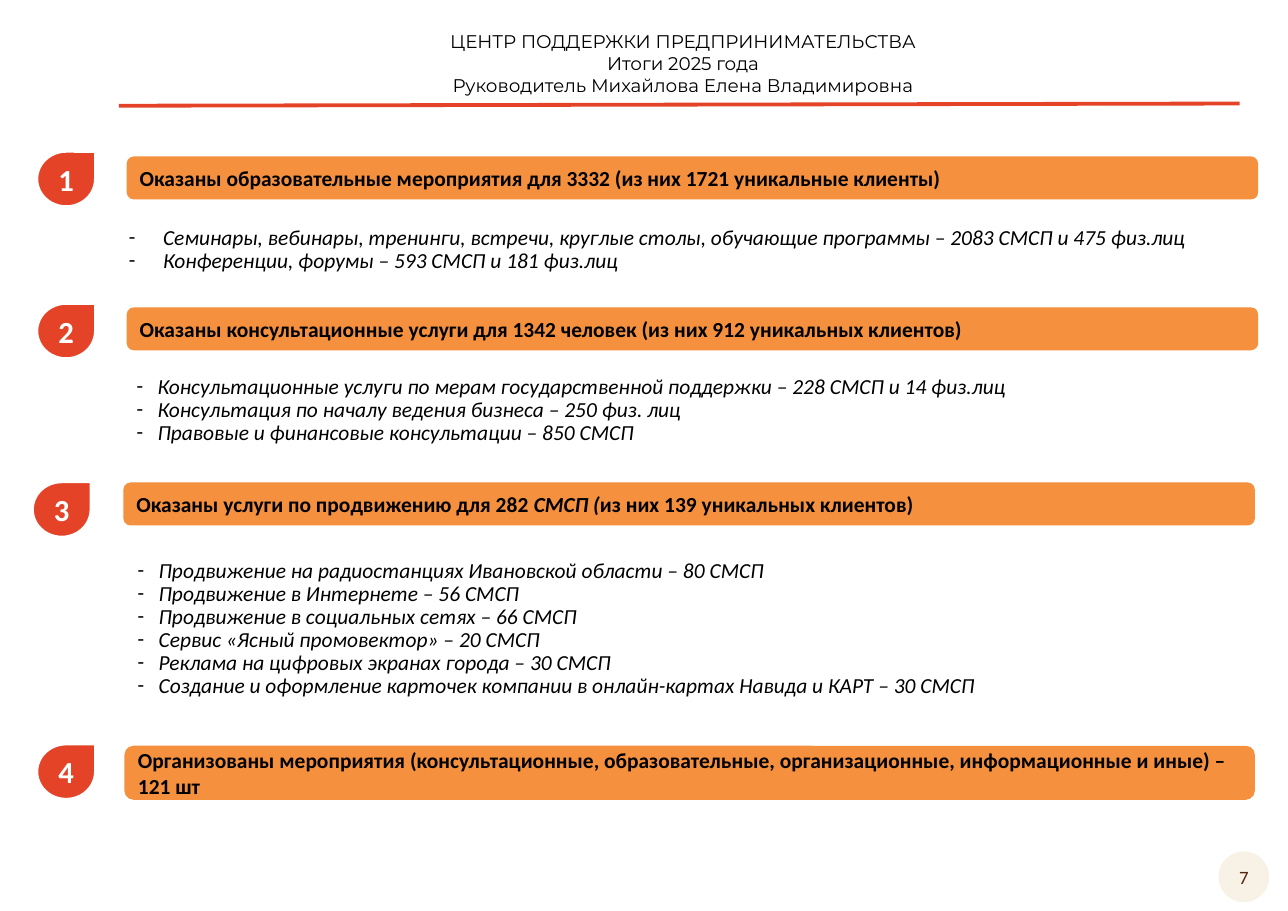
from lxml import etree
from pptx import Presentation, util as u
from pptx.dml.color import RGBColor
from pptx.enum import shapes, text
from pptx.oxml import ns

COLOURS = {"red": "E44328", "orange": "F4903E", "cream": "F7F2E5",
           "brown": "562212", "black": "000000", "white": "FFFFFF"}

HEADER = ["ЦЕНТР ПОДДЕРЖКИ ПРЕДПРИНИМАТЕЛЬСТВА", "Итоги 2025 года",
          "Руководитель Михайлова Елена Владимировна"]

# Badge (left, top), banner box, banner parts (every second one is italic)
SECTIONS = [
    ((0.34, 1.38), (1.15, 1.42, 10.27, 0.39),
     ["Оказаны образовательные мероприятия для 3332 (из них 1721 уникальные клиенты)"]),
    ((0.34, 2.76), (1.15, 2.79, 10.27, 0.39),
     ["Оказаны консультационные услуги для 1342 человек (из них 912 уникальных клиентов)"]),
    ((0.3, 4.38), (1.12, 4.38, 10.27, 0.39),
     ["Оказаны услуги по продвижению для 282 ", "СМСП (", "из них 139 уникальных клиентов)"]),
    ((0.34, 6.76), (1.13, 6.77, 10.26, 0.49),
     ["Организованы мероприятия (консультационные, образовательные, организационные, "
      "информационные и иные) – 121 шт"]),
]

# Placeholder index, box, indent, items
LISTS = [
    (1, (1.07, 2.01, 10.13, 0.52), 0.31,
     ["Семинары, вебинары, тренинги, встречи, круглые столы, обучающие программы – "
      "2083 СМСП и 475 физ.лиц",
      "Конференции, форумы – 593 СМСП и 181 физ.лиц"]),
    (2, (1.14, 3.36, 10.26, 0.74), 0.19,
     ["Консультационные услуги по мерам государственной поддержки – 228 СМСП и 14 физ.лиц",
      "Консультация по началу ведения бизнеса – 250 физ. лиц",
      "Правовые и финансовые консультации – 850 СМСП"]),
    (3, (1.15, 5.03, 10.26, 1.37), 0.19,
     ["Продвижение на радиостанциях Ивановской области – 80 СМСП",
      "Продвижение в Интернете – 56 СМСП",
      "Продвижение в социальных сетях – 66 СМСП",
      "Сервис «Ясный промовектор» – 20 СМСП",
      "Реклама на цифровых экранах города – 30 СМСП",
      "Создание и оформление карточек компании в онлайн-картах Навида и КАРТ – 30 СМСП"]),
]


class Report:
    """Holds the slide and draws its elements in one style."""

    def __init__(self, slide):
        self.slide = slide

    def colour(self, name):
        return RGBColor.from_string(COLOURS[name])

    def format_run(self, run, size, colour="black", bold=False, italic=False, face="Calibri"):
        font = run.font
        font.name, font.size, font.bold, font.italic = face, u.Pt(size), bold, italic
        font.color.rgb = self.colour(colour)

    def set_frame(self, frame, margins=(0, 0, 0, 0), anchor=text.MSO_ANCHOR.MIDDLE):
        frame.word_wrap = True
        frame.auto_size = text.MSO_AUTO_SIZE.NONE
        frame.vertical_anchor = anchor
        (frame.margin_left, frame.margin_top,
         frame.margin_right, frame.margin_bottom) = map(u.Inches, margins)

    def place(self, placeholder, box):
        (placeholder.left, placeholder.top,
         placeholder.width, placeholder.height) = map(u.Inches, box)

    def shape(self, kind, box, fill):
        shape = self.slide.shapes.add_shape(kind, *map(u.Inches, box))
        shape.shadow.inherit = False
        shape.fill.solid()
        shape.fill.fore_color.rgb = self.colour(fill)
        shape.line.fill.background()
        self.set_frame(shape.text_frame)
        return shape

    def label(self, shape, wording, size, colour, bold=False):
        paragraph = shape.text_frame.paragraphs[0]
        paragraph.text = wording
        paragraph.alignment = text.PP_ALIGN.CENTER
        self.format_run(paragraph.runs[0], size, colour, bold)

    def header(self, lines):
        title = self.slide.shapes.title
        self.place(title, (1.15, 0.26, 10.1, 0.62))
        self.set_frame(title.text_frame, (0, 0.01, 0, 0), text.MSO_ANCHOR.TOP)
        title.text_frame.text = "\n".join(lines)
        for paragraph in title.text_frame.paragraphs:
            paragraph.alignment = text.PP_ALIGN.CENTER
            self.format_run(paragraph.runs[0], 12, face="Montserrat")

    def rule(self, start, end):
        rule = self.slide.shapes.add_connector(
            shapes.MSO_CONNECTOR.STRAIGHT, *map(u.Inches, start + end))
        rule.line.color.rgb = self.colour("red")
        rule.line.width = u.Pt(2.5)
        etree.SubElement(rule._element.spPr, ns.qn("a:effectLst"))

    def badge(self, number, corner):
        badge = self.shape(shapes.MSO_SHAPE.TEAR, corner + (0.52, 0.49), "red")
        badge.line.color.rgb = self.colour("white")
        badge.line.width = u.Pt(1)
        self.label(badge, str(number), 20, "white", bold=True)

    def banner(self, box, parts):
        banner = self.shape(shapes.MSO_SHAPE.ROUNDED_RECTANGLE, box, "orange")
        self.set_frame(banner.text_frame, (0.1, 0.05, 0.1, 0.05))
        paragraph = banner.text_frame.paragraphs[0]
        paragraph.alignment = text.PP_ALIGN.LEFT
        for position, part in enumerate(parts):
            run = paragraph.add_run()
            run.text = part
            self.format_run(run, 14, bold=True, italic=position % 2 == 1)

    def dash_list(self, index, box, indent, items):
        body = self.slide.placeholders[index]
        self.place(body, box)
        self.set_frame(body.text_frame, (0.1, 0.05, 0.1, 0.05), text.MSO_ANCHOR.TOP)
        body.text_frame.text = "\n".join(items)
        for paragraph in body.text_frame.paragraphs:
            properties = paragraph._p.get_or_add_pPr()
            properties.set("marL", str(u.Inches(indent)))
            properties.set("indent", str(-u.Inches(indent)))
            etree.SubElement(properties, ns.qn("a:buFont"), typeface="Calibri")
            etree.SubElement(properties, ns.qn("a:buChar"), char="-")
            paragraph.line_spacing = 0.9
            paragraph.space_before = u.Pt(0)
            self.format_run(paragraph.runs[0], 14, italic=True)

    def page_number(self, number):
        circle = self.shape(shapes.MSO_SHAPE.OVAL, (11.06, 7.73, 0.46, 0.46), "cream")
        self.label(circle, str(number), 12.3, "brown")

    def remove_empty_placeholders(self):
        for placeholder in list(self.slide.placeholders):
            if not placeholder.text_frame.text:
                placeholder._element.getparent().remove(placeholder._element)


def main():
    prs = Presentation()
    prs.slide_width, prs.slide_height = u.Inches(11.69), u.Inches(8.27)
    comparison_layout = prs.slide_layouts[4]
    report = Report(prs.slides.add_slide(comparison_layout))

    report.header(HEADER)
    report.rule((1.08, 0.96), (11.25, 0.94))
    for number, (corner, box, parts) in enumerate(SECTIONS, 1):
        report.badge(number, corner)
        report.banner(box, parts)
    for dash_list in LISTS:
        report.dash_list(*dash_list)
    report.page_number(7)
    report.remove_empty_placeholders()
    prs.save("out.pptx")


if __name__ == "__main__":
    main()
